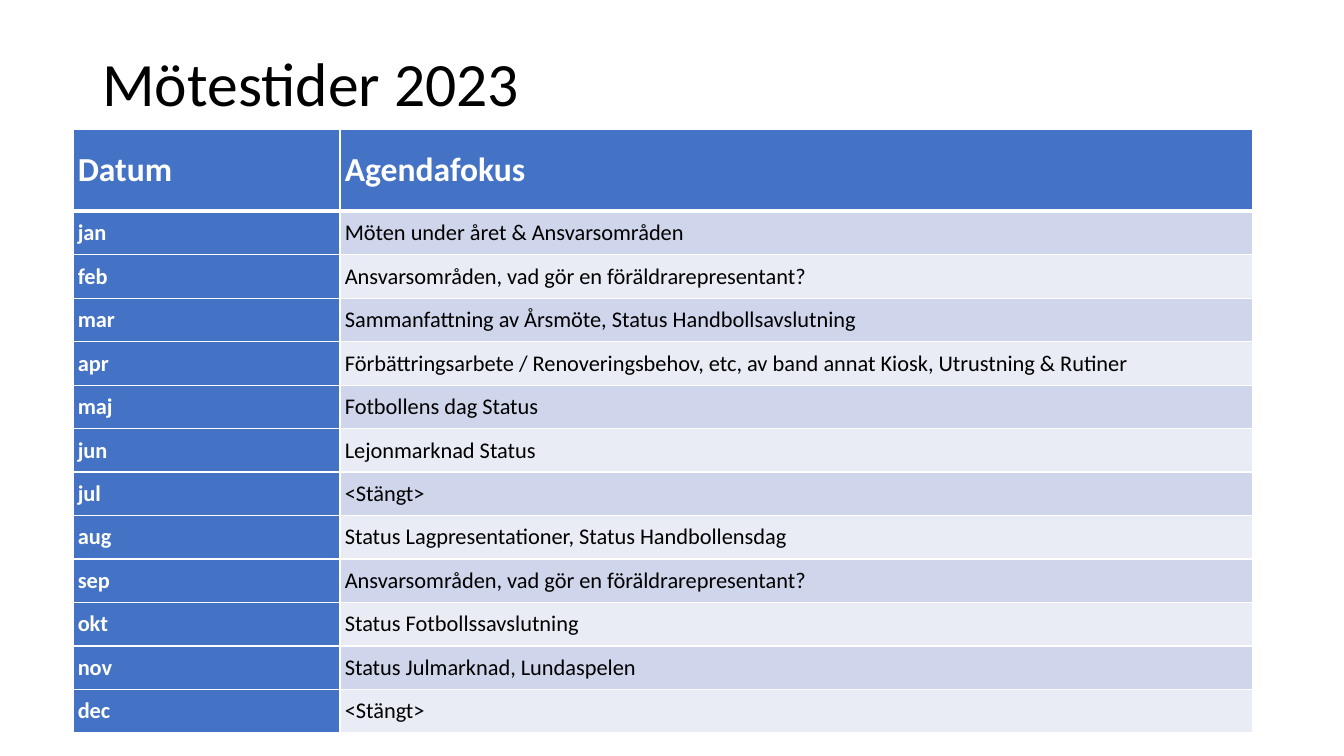
"""Build the slide with the 2023 meeting schedule."""
from lxml.etree import SubElement
from pptx import Presentation
from pptx.dml.color import RGBColor
from pptx.enum.text import MSO_ANCHOR
from pptx.oxml.ns import qn
from pptx.util import Cm, Pt

TITLE = "Mötestider 2023"
HEADER = ("Datum", "Agendafokus")
MEETINGS = [
    ("jan", "Möten under året & Ansvarsområden"),
    ("feb", "Ansvarsområden, vad gör en föräldrarepresentant?"),
    ("mar", "Sammanfattning av Årsmöte, Status Handbollsavslutning"),
    ("apr", "Förbättringsarbete / Renoveringsbehov, etc, av band annat Kiosk, Utrustning & Rutiner"),
    ("maj", "Fotbollens dag Status"),
    ("jun", "Lejonmarknad Status"),
    ("jul", "<Stängt>"),
    ("aug", "Status Lagpresentationer, Status Handbollensdag"),
    ("sep", "Ansvarsområden, vad gör en föräldrarepresentant?"),
    ("okt", "Status Fotbollssavslutning"),
    ("nov", "Status Julmarknad, Lundaspelen"),
    ("dec", "<Stängt>"),
]
WHITE, BLACK, BLUE = "FFFFFF", "000000", "4472C4"
BANDS = ("CFD5EA", "E9EBF5")
COLUMN_WIDTHS = (Cm(6.73), Cm(22.99))
HEADER_HEIGHT, ROW_HEIGHT = Cm(2.06), Cm(1.096)


def color(value):
    return RGBColor.from_string(value)


def write(frame, text, size, ink=BLACK, bold=False, spacing=1.0):
    para = frame.paragraphs[0]
    para.line_spacing = spacing
    span = para.add_run()
    span.text = text
    span.font.name = "Calibri"
    span.font.size = Pt(size)
    span.font.bold = bold
    span.font.color.rgb = color(ink)


def add_borders(cell, top, bottom):
    properties = cell._tc.get_or_add_tcPr()
    for side, width in (("L", 1), ("R", 1), ("T", top), ("B", bottom)):
        line = SubElement(properties, qn(f"a:ln{side}"), w=str(Pt(width)))
        fill = SubElement(line, qn("a:solidFill"))
        SubElement(fill, qn("a:srgbClr"), val=WHITE)


def format_cell(cell, text, row, column):
    heading = row == 0 or column == 0
    cell.margin_left = cell.margin_right = Cm(0.12)
    cell.margin_top = cell.margin_bottom = 0
    cell.vertical_anchor = MSO_ANCHOR.MIDDLE
    add_borders(cell, top=3 if row == 1 else 1, bottom=3 if row == 0 else 1)
    cell.fill.solid()
    cell.fill.fore_color.rgb = color(BLUE if heading else BANDS[(row - 1) % 2])
    write(cell.text_frame, text, 24 if row == 0 else 16,
          ink=WHITE if heading else BLACK, bold=heading)


def add_title(page):
    box = page.shapes.add_textbox(Cm(2.33), Cm(0.33), Cm(29.21), Cm(3.68))
    frame = box.text_frame
    frame.word_wrap = True
    frame.vertical_anchor = MSO_ANCHOR.MIDDLE
    write(frame, TITLE, 44, spacing=0.9)


def add_schedule(page):
    rows = [HEADER, *MEETINGS]
    height = HEADER_HEIGHT + ROW_HEIGHT * len(MEETINGS)
    table = page.shapes.add_table(len(rows), len(HEADER), Cm(1.84), Cm(3.26),
                                  sum(COLUMN_WIDTHS), height).table
    table.first_col = True
    for column, width in zip(table.columns, COLUMN_WIDTHS):
        column.width = width
    for row, texts in enumerate(rows):
        table.rows[row].height = ROW_HEIGHT if row else HEADER_HEIGHT
        for column, text in enumerate(texts):
            format_cell(table.cell(row, column), text, row, column)


def main():
    deck = Presentation()
    deck.slide_width, deck.slide_height = Cm(33.87), Cm(19.05)
    page = deck.slides.add_slide(deck.slide_layouts[6])
    add_title(page)
    add_schedule(page)
    deck.save("out.pptx")


if __name__ == "__main__":
    main()
